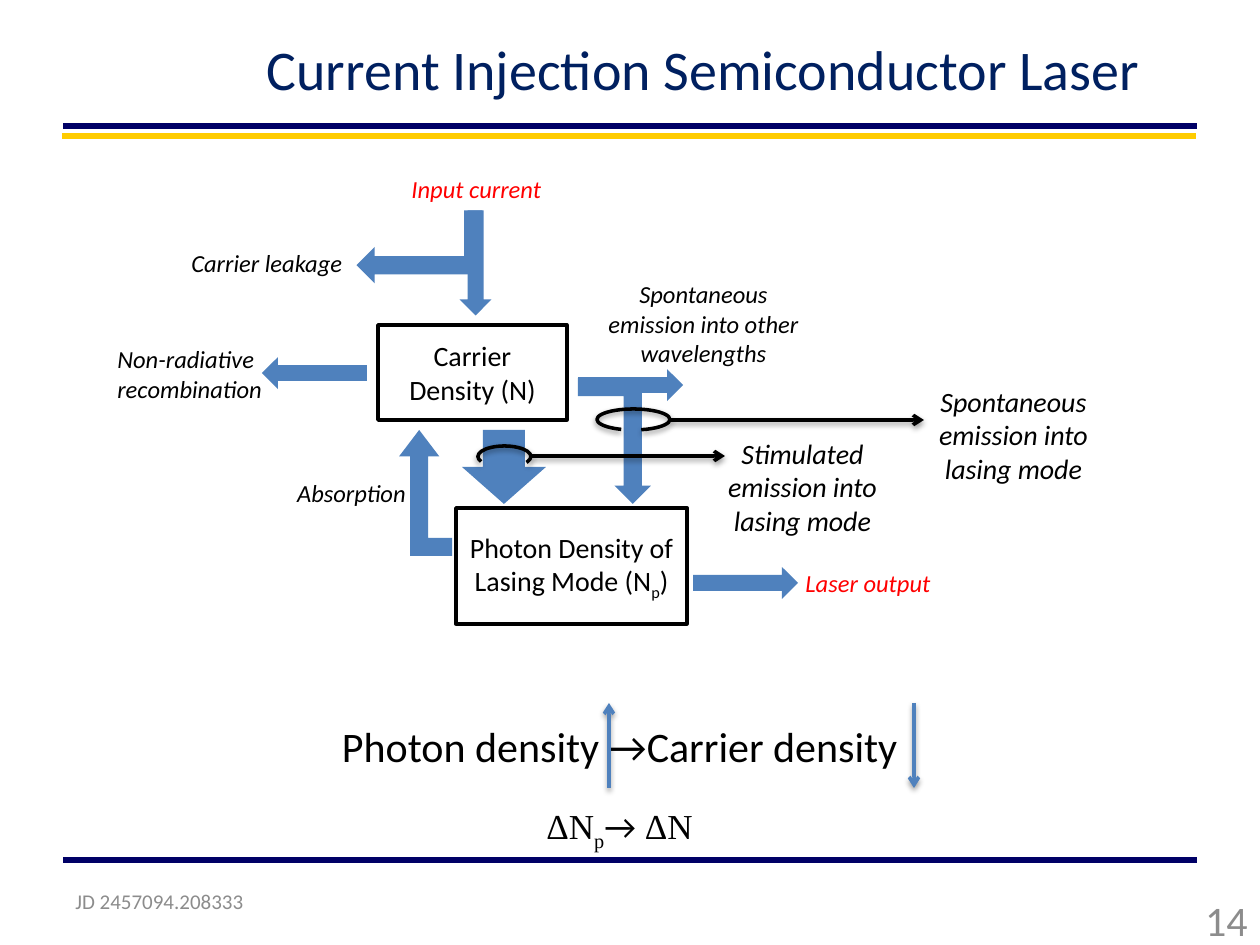
from lxml.etree import SubElement
from pptx import Presentation
from pptx.dml.color import RGBColor
from pptx.enum.shapes import MSO_CONNECTOR, MSO_SHAPE
from pptx.enum.text import MSO_ANCHOR, PP_ALIGN
from pptx.oxml.ns import qn
from pptx.util import Emu, Pt

PX = 914400 / 126
COLORS = {"navy": "000066", "gold": "FFCC00", "title": "002060", "blue": "4F81BD",
          "black": "000000", "white": "FFFFFF", "red": "FF0000", "gray": "8C8C8C"}
SANS, SERIF = "Calibri", "Times New Roman"
LEFT, MID, RIGHT = PP_ALIGN.LEFT, PP_ALIGN.CENTER, PP_ALIGN.RIGHT

# x1, y1, x2, y2, color
RULES = [(62, 136, 1196, 136, "gold"),
         (63, 126, 1197, 126, "navy"),
         (63, 860, 1197, 860, "navy")]
# text, box, size, color, alignment, font, anchored in the middle
TEXTS = [
    ("Current Injection Semiconductor Laser", (210, 10, 987, 116), 32, "title", MID, SANS, True),
    ("Photon density →Carrier density ", (21, 714, 1207, 63), 24, "black", MID, SANS, False),
    ("ΔN|p|→| ΔN", (315, 798, 609, 55), 20, "black", MID, SERIF, False),
    ("JD 2457094.208333", (63, 876, 294, 50), 12, "gray", LEFT, SANS, True),
    ("14", (966, 895, 294, 50), 24, "gray", RIGHT, SANS, True),
]
TRENDS = [(609, 788, 609, 703), (914, 703, 914, 788)]

BOXES = [("Carrier Density (N)", (378, 325, 189, 95)),
         ("Photon Density of Lasing Mode (N|p|)", (456, 508, 231, 116))]
BENT, STRAIGHT, DOWN = MSO_SHAPE.BENT_UP_ARROW, MSO_SHAPE.RIGHT_ARROW, MSO_SHAPE.DOWN_ARROW
# kind, box, rotation, flip, adjustments
ARROWS = [
    (BENT, (578, 378, 73, 126), 0, "flipV", ()),
    (STRAIGHT, (578, 369, 105, 32), 0, None, ()),
    (DOWN, (462, 430, 84, 74), 0, None, ()),
    (STRAIGHT, (262, 357, 105, 32), 0, "flipH", ()),
    (BENT, (399, 430, 53, 126), 180, "flipV", (0.34, 0.38, 0.5)),
    (BENT, (383, 184, 73, 126), 90, "flipV", ()),
    (STRAIGHT, (423, 247, 105, 32), 90, None, ()),
    (STRAIGHT, (693, 567, 105, 32), 0, None, ()),
]
# text, box, size, color, alignment
LABELS = [
    ("Carrier leakage", (179, 242, 199, 43), 14, "black", LEFT),
    ("Non-radiative recombination", (105, 338, 199, 72), 14, "black", LEFT),
    ("Input current", (399, 168, 158, 43), 14, "red", LEFT),
    ("Spontaneous emission into other wavelengths", (588, 273, 231, 102), 14, "black", MID),
    ("Absorption", (252, 472, 199, 43), 14, "black", MID),
    ("Spontaneous emission into lasing mode", (914, 378, 199, 115), 16, "black", MID),
    ("Stimulated emission into lasing mode", (703, 430, 199, 115), 16, "black", MID),
    ("Laser output", (793, 562, 158, 43), 14, "red", LEFT),
]
# loop box, start and end of its arc, then the pointer
LOOPS = [((597, 409, 73, 21), (84.6, 31.68), (671, 420, 924, 420)),
         ((478, 446, 53, 21), (100.71, 8.93), (532, 456, 725, 456))]


def scale(nums):
    return [Emu(round(n * PX)) for n in nums]


def rgb(name):
    return RGBColor.from_string(COLORS[name])


def stroke(shape, color, width):
    shape.line.color.rgb = rgb(color)
    shape.line.width = Pt(width)


def shade(shape, soft):
    """Set an empty effect list, or a soft shadow straight below."""
    props = shape._element.spPr
    for old in props.findall(qn("a:effectLst")):
        props.remove(old)
    fx = SubElement(props, qn("a:effectLst"))
    if soft:
        drop = SubElement(fx, qn("a:outerShdw"), blurRad="40000", dist="20000",
                          dir="5400000", rotWithShape="0")
        tint = SubElement(drop, qn("a:srgbClr"), val=COLORS["black"])
        SubElement(tint, qn("a:alpha"), val="38000")


def add_line(shapes, ends, color, width, arrow=False):
    line = shapes.add_connector(MSO_CONNECTOR.STRAIGHT, *scale(ends))
    stroke(line, color, width)
    if arrow:
        SubElement(line.line._get_or_add_ln(), qn("a:tailEnd"), type="arrow")
    shade(line, arrow)


def write(shape, text, size, color, align=MID, font=SANS, middle=False, italic=False):
    """Fill a shape with text; bars part the runs, and a run "p" is a subscript."""
    frame = shape.text_frame
    frame.word_wrap = True
    frame.vertical_anchor = MSO_ANCHOR.MIDDLE if middle else MSO_ANCHOR.TOP
    para = frame.paragraphs[0]
    para.alignment = align
    for part in text.split("|"):
        run = para.add_run()
        run.text = part
        run.font.name = SANS if part == "→" else font
        run.font.size = Pt(size)
        run.font.color.rgb = rgb(color)
        if italic:
            run.font.italic = True
        if part == "p":
            run._r.get_or_add_rPr().set("baseline", "-25000")


def add_arrow(shapes, kind, box, turn, flip, adjust):
    arrow = shapes.add_shape(kind, *scale(box))
    arrow.fill.solid()
    arrow.fill.fore_color.rgb = rgb("blue")
    arrow.line.fill.background()
    arrow.shadow.inherit = False
    arrow.rotation = turn
    if flip:
        arrow._element.spPr.xfrm.set(flip, "1")
    for i, value in enumerate(adjust):
        arrow.adjustments[i] = value


def add_loop(shapes, box, span, ends):
    arc = shapes.add_shape(MSO_SHAPE.ARC, *scale(box))
    arc.adjustments[0], arc.adjustments[1] = span
    arc.fill.background()
    stroke(arc, "black", 2)
    shade(arc, True)
    add_line(shapes, ends, "black", 2, True)


def main():
    deck = Presentation()
    deck.slide_width, deck.slide_height = scale((1260, 945))
    shapes = deck.slides.add_slide(deck.slide_layouts[6]).shapes
    for *ends, color in RULES:
        add_line(shapes, ends, color, 3)
    for text, box, *style in TEXTS:
        write(shapes.add_textbox(*scale(box)), text, *style)
    for ends in TRENDS:
        add_line(shapes, ends, "blue", 2, True)

    chart = shapes.add_group_shape().shapes
    for text, box in BOXES:
        rect = chart.add_shape(MSO_SHAPE.RECTANGLE, *scale(box))
        rect.fill.solid()
        rect.fill.fore_color.rgb = rgb("white")
        stroke(rect, "black", 2)
        rect.shadow.inherit = False
        write(rect, text, 16, "black", middle=True)
    for arrow in ARROWS:
        add_arrow(chart, *arrow)
    for text, box, *style in LABELS:
        write(chart.add_textbox(*scale(box)), text, *style, italic=True)
    for loop in LOOPS:
        add_loop(chart, *loop)
    deck.save("out.pptx")


if __name__ == "__main__":
    main()
